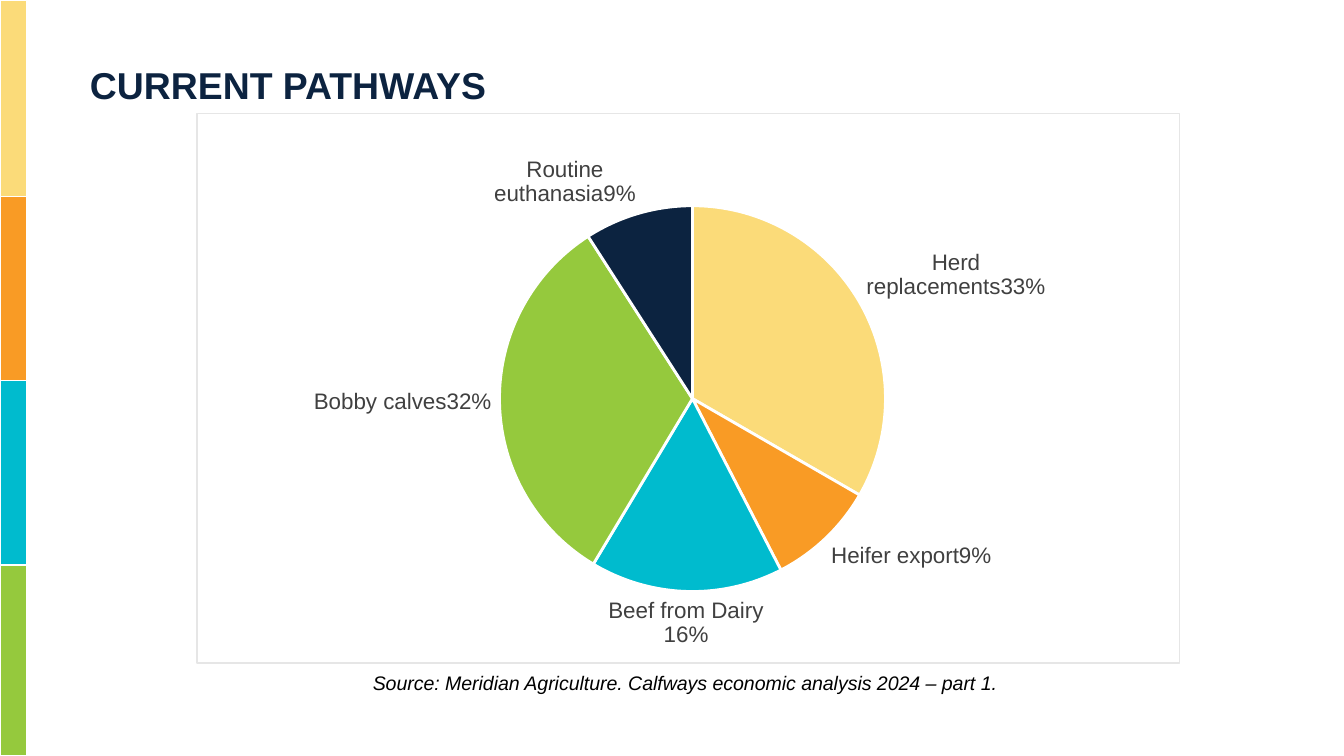
from lxml import etree
from pptx import Presentation
from pptx.chart.data import CategoryChartData
from pptx.dml.color import RGBColor
from pptx.enum.chart import XL_CHART_TYPE as ChartType, XL_LABEL_POSITION as LabelPosition
from pptx.enum.text import PP_ALIGN as Align
from pptx.oxml import parse_xml
from pptx.oxml.ns import nsdecls, qn
from pptx.util import Cm, Pt

COLORS = {
    "sand": "FBDB79", "orange": "F99B25", "teal": "00BBCE", "green": "95C93D",
    "navy": "0C2340", "white": "FFFFFF", "black": "000000",
    "label": "404040", "border": "E6E6E6",
}
PATHWAYS = [
    ("Herd replacements", 33, "33%", "sand"),
    ("Heifer export", 9, "9%", "orange"),
    ("Beef from Dairy", 16, " 16%", "teal"),
    ("Bobby calves", 32, "32%", "green"),
    ("Routine euthanasia", 9, "9%", "navy"),
]
BAND_ROWS = [("sand", 3.71), ("orange", 3.48), ("teal", 3.48), ("green", 3.61)]
LABEL_FORMAT = {"name": "Arial", "size": Pt(12)}
TITLE_FORMAT = {"name": "Arial", "size": Pt(20), "bold": True}
SOURCE_FORMAT = {"name": "Arial", "size": Pt(10.5), "italic": True}
PLOT_LAYOUT = {
    "layoutTarget": "inner", "xMode": "edge", "yMode": "edge",
    "x": 0.308, "y": 0.168, "w": 0.393, "h": 0.702,
}


def color(name):
    """Return the named colour."""
    return RGBColor.from_string(COLORS[name])


def apply_format(target, values):
    """Set each attribute in values on the target."""
    for attribute, value in values.items():
        setattr(target, attribute, value)


def paint(part, name):
    """Give a cell or chart part a solid fill."""
    part.fill.solid()
    part.fill.fore_color.rgb = color(name)


def add_color_band(slide, left, top, width, height):
    """Stack the coloured cells down the slide edge."""
    band = slide.shapes.add_table(len(BAND_ROWS), 1, left, top, width, height).table
    apply_format(band, {"first_row": False, "horz_banding": False})
    band.columns[0].width = width
    for row, (fill, row_height) in zip(band.rows, BAND_ROWS):
        row.height = Cm(row_height)
        cell = row.cells[0]
        apply_format(cell, dict.fromkeys(
            ("margin_left", "margin_right", "margin_top", "margin_bottom"), 0))
        paint(cell, fill)


def add_text(slide, box, text, font_format, font_color, frame_format, paragraph_format):
    """Write one paragraph in the given box."""
    frame = slide.shapes.add_textbox(*box).text_frame
    apply_format(frame, {"word_wrap": True, **frame_format})
    paragraph = frame.paragraphs[0]
    apply_format(paragraph, paragraph_format)
    run = paragraph.add_run()
    run.text = text
    apply_format(run.font, font_format)
    run.font.color.rgb = color(font_color)


def set_plot_layout(chart):
    """Fix the inner plot area within the chart."""
    plot_area = chart.plots[0]._element.getparent()
    for old in plot_area.findall(qn("c:layout")):
        plot_area.remove(old)
    layout = parse_xml(f"<c:layout {nsdecls('c')}/>")
    manual = etree.SubElement(layout, qn("c:manualLayout"))
    for tag, value in PLOT_LAYOUT.items():
        etree.SubElement(manual, qn(f"c:{tag}")).set("val", str(value))
    plot_area.insert(0, layout)


def set_chart_border(chart):
    """Draw a thin frame around the white chart area."""
    border = parse_xml(
        f"<c:spPr {nsdecls('c', 'a')}><a:solidFill><a:srgbClr val='{COLORS['white']}'/></a:solidFill>"
        f"<a:ln w='{Pt(0.75)}'><a:solidFill><a:srgbClr val='{COLORS['border']}'/></a:solidFill></a:ln>"
        "</c:spPr>")
    chart.font
    chart._chartSpace.find(qn("c:chart")).addnext(border)


def add_pathways_pie(slide, left, top, width, height):
    """Chart the share of calves on each pathway."""
    shares = CategoryChartData(number_format="0")
    shares.categories = [name for name, *_ in PATHWAYS]
    shares.add_series("", [share for _, share, *_ in PATHWAYS])
    chart = slide.shapes.add_chart(ChartType.PIE, left, top, width, height, shares).chart
    apply_format(chart, {"has_legend": False, "has_title": False})
    apply_format(chart.font, {"name": "Arial", "size": Pt(10)})
    chart.font.color.rgb = color("black")
    pie = chart.plots[0]
    apply_format(pie, {"vary_by_categories": True, "has_data_labels": True})
    apply_format(pie.data_labels, {
        "show_category_name": True, "show_percentage": True, "show_value": False,
        "position": LabelPosition.OUTSIDE_END})
    apply_format(pie.data_labels.font, LABEL_FORMAT)
    pie.data_labels.font.color.rgb = color("label")
    for index, (name, _, percent, fill) in enumerate(PATHWAYS):
        slice_point = pie.series[0].points[index]
        paint(slice_point.format, fill)
        slice_point.format.line.width = Pt(1.5)
        slice_point.format.line.color.rgb = color("white")
        label = slice_point.data_label
        run = label.text_frame.paragraphs[0].add_run()
        run.text = name + percent
        apply_format(run.font, LABEL_FORMAT)
        run.font.color.rgb = color("label")
        label.position = LabelPosition.OUTSIDE_END
    set_plot_layout(chart)
    set_chart_border(chart)


def build_pathways_slide(deck):
    """Lay out the band, title, pie and source line."""
    slide = deck.slides.add_slide(deck.slide_layouts[6])
    add_color_band(slide, Cm(0), Cm(0), Cm(0.51), Cm(14.28))
    no_margins = dict.fromkeys(
        ("margin_left", "margin_right", "margin_top", "margin_bottom"), 0)
    add_text(slide, (Cm(1.7), Cm(0.79), Cm(11.25), Cm(11.99)), "CURRENT PATHWAYS",
             TITLE_FORMAT, "navy", no_margins,
             {"line_spacing": Pt(34.9), "space_after": Pt(12)})
    add_pathways_pie(slide, Cm(3.71), Cm(2.13), Cm(18.59), Cm(10.41))
    add_text(slide, (Cm(3.61), Cm(12.55), Cm(18.69), Cm(0.74)),
             "Source: Meridian Agriculture. Calfways economic analysis 2024 – part 1.",
             SOURCE_FORMAT, "black", {}, {"alignment": Align.CENTER})


def main():
    """Build and save the deck."""
    deck = Presentation()
    apply_format(deck, {"slide_width": Cm(25.4), "slide_height": Cm(14.28)})
    build_pathways_slide(deck)
    deck.save("out.pptx")


if __name__ == "__main__":
    main()
